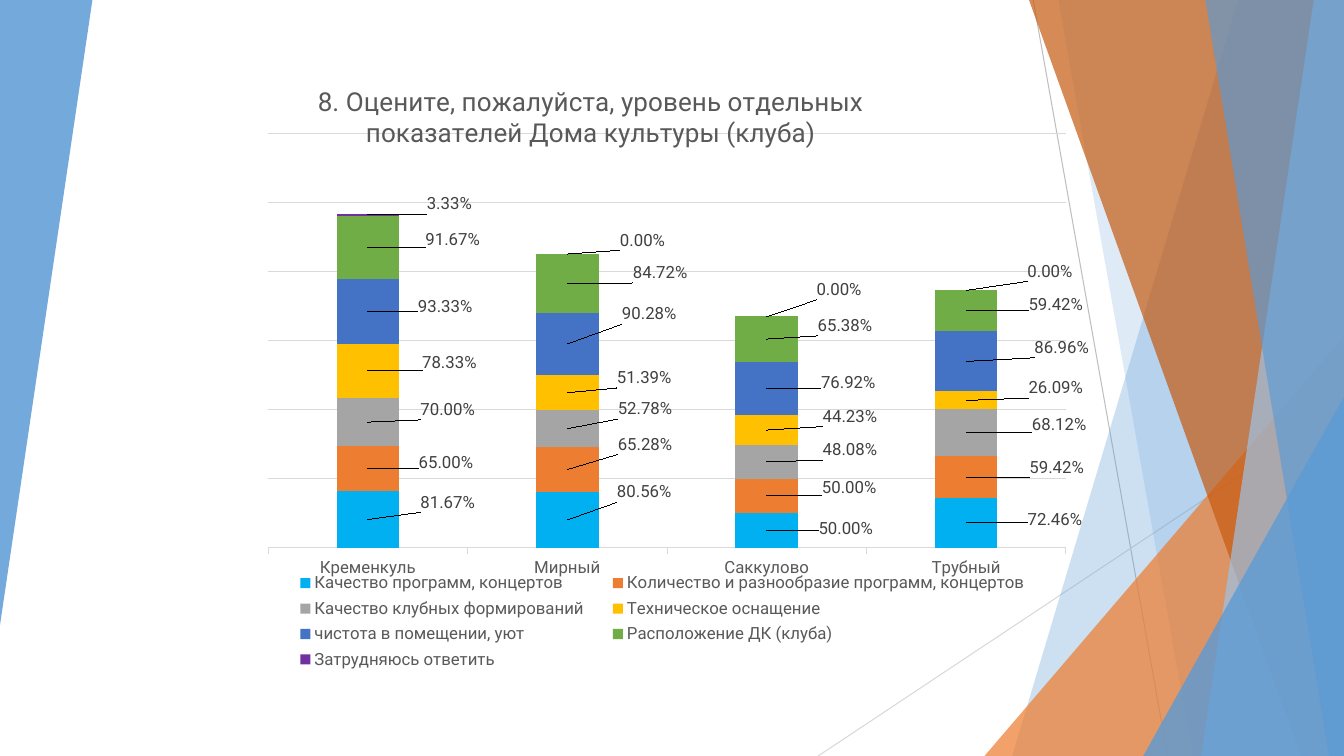
import itertools

import pptx
import pptx.chart.data
import pptx.dml.color
import pptx.enum.chart
import pptx.enum.shapes
import pptx.oxml
import pptx.oxml.ns
import pptx.util
from lxml import etree

COLUMNS, ROWS = 16, 9
COLORS = {
    "blue": "5B9BD5", "light blue": "9DC3E6", "orange": "ED7D31", "rust": "C55A11",
    "guide": "BFBFBF", "grid": "D9D9D9", "text": "595959", "label": "404040",
    "sky": "00B0F0", "grey": "A5A5A5", "yellow": "FFC000", "royal": "4472C4",
    "green": "70AD47", "purple": "7030A0",
}

TITLE = "8. Оцените, пожалуйста, уровень отдельных показателей Дома культуры (клуба)"
VILLAGES = ["Кременкуль", "Мирный", "Саккулово", "Трубный"]
# Name, colour, values, label centres (column, row)
RATINGS = [
    ("Качество программ, концертов", "sky", (0.8167, 0.8056, 0.5, 0.7246),
     [(5.33, 5.98), (7.67, 5.86), (10.07, 6.29), (12.56, 6.19)]),
    ("Количество и разнообразие программ, концертов", "orange", (0.65, 0.6528, 0.5, 0.5942),
     [(5.31, 5.51), (7.68, 5.29), (10.11, 5.81), (12.58, 5.57)]),
    ("Качество клубных формирований", "grey", (0.7, 0.5278, 0.4808, 0.6812),
     [(5.33, 4.88), (7.68, 4.87), (10.12, 5.36), (12.61, 5.06)]),
    ("Техническое оснащение", "yellow", (0.7833, 0.5139, 0.4423, 0.2609),
     [(5.35, 4.32), (7.67, 4.5), (10.12, 4.96), (12.57, 4.62)]),
    ("чистота в помещении, уют", "royal", (0.9333, 0.9028, 0.7692, 0.8696),
     [(5.3, 3.65), (7.73, 3.74), (10.1, 4.56), (12.64, 4.14)]),
    ("Расположение ДК (клуба)", "green", (0.9167, 0.8472, 0.6538, 0.5942),
     [(5.39, 2.86), (7.86, 3.25), (10.06, 3.88), (12.57, 3.63)]),
    ("Затрудняюсь ответить", "purple", (0.0333, 0, 0, 0),
     [(5.35, 2.43), (7.65, 2.86), (9.99, 3.45), (12.5, 3.23)]),
]
CHART_BOX = (2.66, 0.71, 10.67, 7.96)
PLOT = (0.05, 0.11, 0.89, 0.62)  # shares of the chart
AXIS_MAXIMUM = 6


def color(name):
    return pptx.dml.color.RGBColor.from_string(COLORS[name])


def place(parent, index, mode=None, **shares):
    """Give a chart part a manual layout as its child number index."""
    qn = pptx.oxml.ns.qn
    for old in parent.findall(qn("c:layout")):
        parent.remove(old)
    layout = etree.Element(qn("c:layout"))
    manual = etree.SubElement(layout, qn("c:manualLayout"))
    settings = {"layoutTarget": "inner"} if mode == "inner" else {}
    if mode:
        settings.update(xMode="edge", yMode="edge")
    for tag, value in {**settings, **shares}.items():
        etree.SubElement(manual, qn("c:" + tag)).set("val", str(value))
    parent.insert(index, layout)


class Deck:
    font_name = "Roboto"

    def __init__(self):
        self.presentation = pptx.Presentation()
        self.presentation.slide_width = pptx.util.Inches(13.33)
        self.presentation.slide_height = pptx.util.Inches(7.5)
        self.slide = self.presentation.slides.add_slide(self.presentation.slide_layouts[6])

    def x(self, columns):
        return round(self.presentation.slide_width * columns / COLUMNS)

    def y(self, rows):
        return round(self.presentation.slide_height * rows / ROWS)

    def box(self, left, top, width, height):
        return self.x(left), self.y(top), self.x(width), self.y(height)

    def set_font(self, font, size, color_name):
        font.name, font.size, font.bold = self.font_name, pptx.util.Pt(size), False
        font.color.rgb = color(color_name)

    def set_line(self, line, color_name):
        line.color.rgb = color(color_name)
        line.width = pptx.util.Pt(0.75)

    def paint(self, shape, color_name, opacity):
        shape.shadow.inherit = False
        shape.line.fill.background()
        shape.fill.solid()
        shape.fill.fore_color.rgb = color(color_name)
        tint = shape.element.spPr.find(".//" + pptx.oxml.ns.qn("a:srgbClr"))
        etree.SubElement(tint, pptx.oxml.ns.qn("a:alpha")).set("val", str(opacity * 1000))

    def guide(self, start, end, color_name):
        connector = self.slide.shapes.add_connector(
            pptx.enum.shapes.MSO_CONNECTOR.STRAIGHT,
            self.x(start[0]), self.y(start[1]), self.x(end[0]), self.y(end[1]))
        self.set_line(connector.line, color_name)
        etree.SubElement(connector.element.spPr, pptx.oxml.ns.qn("a:effectLst"))

    def band(self, top_column, bottom_column, color_name, opacity):
        """A full-height band from a slanted left edge to the slide's right edge."""
        builder = self.slide.shapes.build_freeform(self.x(top_column), 0)
        corners = [(COLUMNS, 0), (COLUMNS, ROWS), (bottom_column, ROWS)]
        builder.add_line_segments([(self.x(c), self.y(r)) for c, r in corners], close=True)
        self.paint(builder.convert_to_shape(), color_name, opacity)

    def triangle(self, box, color_name, opacity, rotation=0):
        shape = self.slide.shapes.add_shape(
            pptx.enum.shapes.MSO_SHAPE.ISOSCELES_TRIANGLE, *self.box(*box))
        shape.adjustments[0] = 1
        shape.rotation = rotation
        self.paint(shape, color_name, opacity)

    def ratings_chart(self):
        chart_data = pptx.chart.data.CategoryChartData(number_format="0.00%")
        chart_data.categories = VILLAGES
        for name, _, values, _ in RATINGS:
            chart_data.add_series(name, values)
        chart = self.slide.shapes.add_chart(
            pptx.enum.chart.XL_CHART_TYPE.COLUMN_STACKED, *self.box(*CHART_BOX), chart_data).chart
        self.set_font(chart.font, 12, "text")

        # Title and legend
        chart.has_title = True
        paragraph = chart.chart_title.text_frame.paragraphs[0]
        paragraph.text = TITLE
        self.set_font(paragraph.font, 18.6, "text")
        chart.has_legend = True
        chart.legend.position = pptx.enum.chart.XL_LEGEND_POSITION.BOTTOM
        chart.legend.include_in_layout = False
        self.set_font(chart.legend.font, 12, "text")

        # Axes
        self.set_line(chart.category_axis.format.line, "grid")
        self.set_font(chart.category_axis.tick_labels.font, 12, "text")
        value_axis = chart.value_axis
        value_axis.minimum_scale, value_axis.maximum_scale = 0, AXIS_MAXIMUM
        value_axis.major_unit = 1
        value_axis.visible = False
        self.set_line(value_axis.major_gridlines.format.line, "grid")

        # Series and labels
        plot = chart.plots[0]
        plot.gap_width, plot.overlap, plot.vary_by_categories = 219, 100, False
        for series, (_, color_name, values, _) in zip(plot.series, RATINGS):
            series.format.fill.solid()
            series.format.fill.fore_color.rgb = color(color_name)
            labels = series.data_labels
            labels.show_value = True
            labels.number_format, labels.number_format_is_linked = "0.00%", False
            self.set_font(labels.font, 12, "label")
            for index in range(len(values)):
                self.set_font(series.points[index].data_label.font, 12, "label")
        self.place_parts(chart)

    def place_parts(self, chart):
        find = chart.element.xpath
        place(find(".//c:plotArea")[0], 0, "inner", **dict(zip("xywh", PLOT)))
        place(find("./c:chart/c:title")[0], 1, "edge", x=0.1, y=0.03)
        place(find(".//c:legend")[0], 1, "edge", x=0.06, y=0.76, w=0.86, h=0.16)

        # Label offsets from the segment centres, as shares of the chart
        left, top, width, height = CHART_BOX
        plot_x, plot_y, plot_width, plot_height = PLOT
        labels = iter(find(".//c:dLbl"))
        stacks = [0] * len(VILLAGES)
        for (_, _, values, centres), index in itertools.product(RATINGS, range(len(VILLAGES))):
            middle = stacks[index] + values[index] / 2
            stacks[index] += values[index]
            bar_x = plot_x + plot_width * (index + 0.5) / len(VILLAGES)
            bar_y = plot_y + plot_height * (1 - middle / AXIS_MAXIMUM)
            column, row = centres[index]
            place(next(labels), 1, x=round((column - left) / width - bar_x, 4),
                  y=round((row - top) / height - bar_y, 4))


def main():
    deck = Deck()

    # Decorative background
    deck.guide((12.3, 0), (13.9, ROWS), "guide")
    deck.guide((COLUMNS, 4.84), (9.74, ROWS), "grid")
    deck.band(14.74, 12.05, "blue", 30)
    deck.band(12.6, 14.2, "blue", 20)
    deck.triangle((11.72, 4, 4.28, 5), "orange", 72)
    deck.band(12.25, 15.49, "rust", 70)
    deck.band(15.64, 14.3, "light blue", 70)
    deck.band(14.35, 15.82, "blue", 65)
    deck.triangle((13.61, 4.72, 2.39, 4.28), "blue", 80)
    deck.triangle((0, 0, 1.1, 7.44), "blue", 85, rotation=180)

    deck.ratings_chart()
    deck.presentation.save("out.pptx")


if __name__ == "__main__":
    main()
